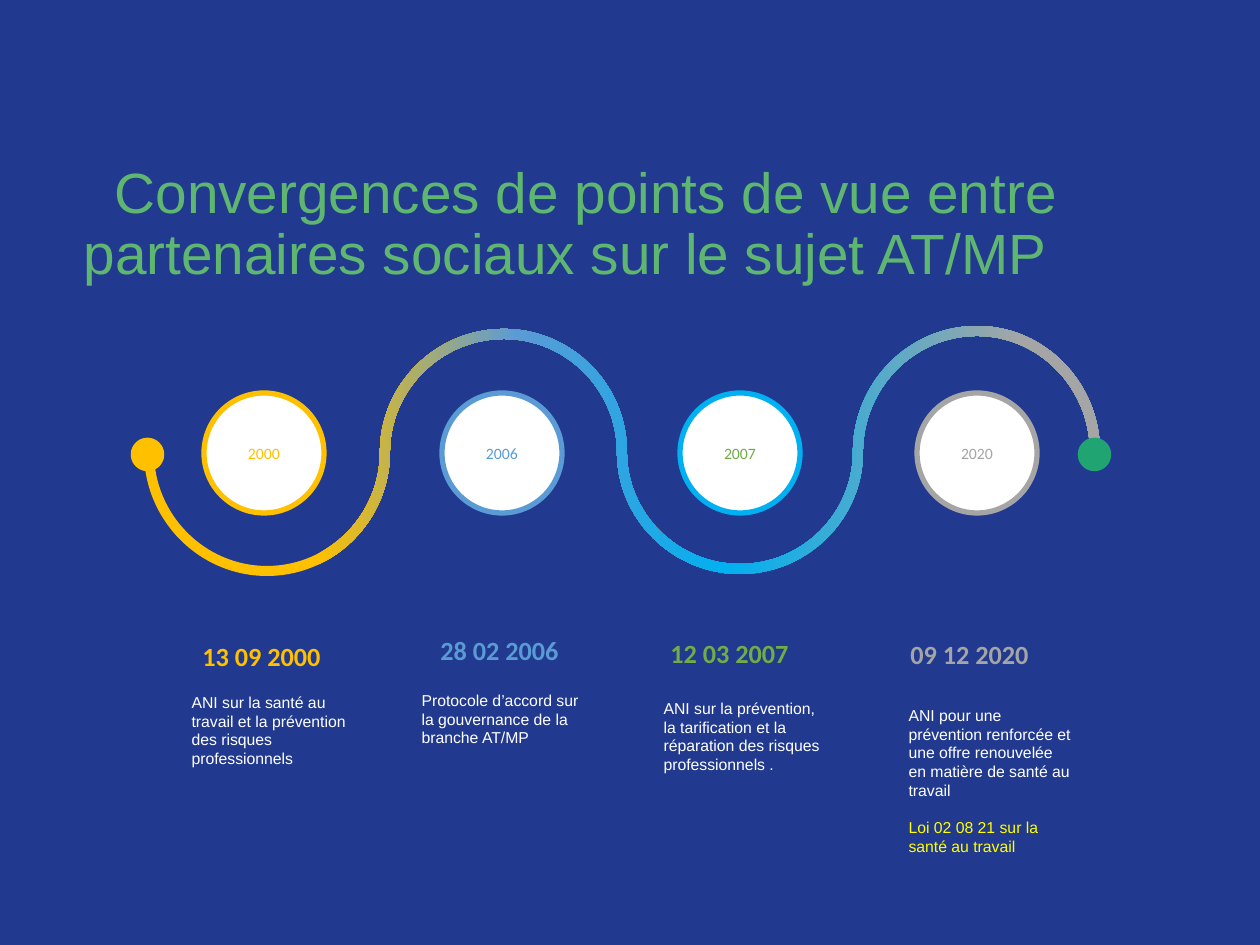
from dataclasses import dataclass

from lxml import etree
from pptx import Presentation
from pptx.dml.color import RGBColor
from pptx.enum.shapes import MSO_SHAPE
from pptx.enum.text import MSO_ANCHOR, MSO_AUTO_SIZE, PP_ALIGN
from pptx.oxml.ns import qn
from pptx.util import Emu, Pt

OVAL = MSO_SHAPE.OVAL
TOP, MIDDLE = MSO_ANCHOR.TOP, MSO_ANCHOR.MIDDLE
LEFT, CENTER = PP_ALIGN.LEFT, PP_ALIGN.CENTER
NO_AUTOFIT = MSO_AUTO_SIZE.NONE

NAVY = RGBColor(0x21, 0x3A, 0x8F)
WHITE = RGBColor(0xFF, 0xFF, 0xFF)
GOLD = RGBColor(0xFF, 0xC0, 0x00)
BLUE = RGBColor(0x5B, 0x9B, 0xD5)
CYAN = RGBColor(0x00, 0xB0, 0xF0)
GREY = RGBColor(0xA5, 0xA5, 0xA5)
GREEN = RGBColor(0x70, 0xAD, 0x47)
TITLE_GREEN = RGBColor(0x5F, 0xB6, 0x70)
END_GREEN = RGBColor(0x20, 0xA4, 0x72)
YELLOW = RGBColor(0xFF, 0xFF, 0x00)

EMU_PER_PX = 914400 / 126
HALF_WIDTH = 5
ROUNDNESS = 0.55
WAVE_KNOTS = [(149, 452), (267, 571), (385, 452), (504, 334), (622, 452),
              (740, 569), (858, 452), (977, 331), (1095, 452)]
WAVE_STOPS = [(18, GOLD), (39, BLUE), (61, CYAN), (92, GREY)]


@dataclass
class Box:
    x: int
    y: int
    w: int
    h: int


@dataclass
class Milestone:
    year: str
    ring: RGBColor
    color: RGBColor
    circle_x: int
    date: str
    date_box: Box
    caption_box: Box
    captions: list[tuple[str, RGBColor]]


MILESTONES = [
    Milestone("2000", GOLD, GOLD, 204, "13 09 2000",
              Box(190, 638, 185, 32), Box(179, 686, 197, 89),
              [("ANI sur la santé au travail et la prévention des risques "
                "professionnels", WHITE)]),
    Milestone("2006", BLUE, BLUE, 442, "28 02 2006",
              Box(428, 632, 203, 32), Box(409, 684, 188, 97),
              [("Protocole d’accord sur la gouvernance de la branche AT/MP", WHITE)]),
    Milestone("2007", CYAN, GREEN, 680, "12 03 2007",
              Box(658, 635, 185, 42), Box(651, 692, 188, 100),
              [("ANI sur la prévention, la tarification et la réparation des "
                "risques professionnels .", WHITE)]),
    Milestone("2020", GREY, GREY, 917, "09 12 2020",
              Box(898, 636, 185, 42), Box(896, 699, 188, 178),
              [("ANI pour une prévention renforcée et une offre renouvelée en "
                "matière de santé au travail", WHITE),
               ("Loi 02 08 21 sur la santé au travail", YELLOW)]),
]


def px(n: float) -> Emu:
    return Emu(round(n * EMU_PER_PX))


def place(sp, box: Box) -> None:
    sp.left, sp.top, sp.width, sp.height = px(box.x), px(box.y), px(box.w), px(box.h)


def add_run(p, text: str, size: float, font: str, color: RGBColor, bold=False) -> None:
    r = p.add_run()
    r.text = text
    r.font.size = Pt(size)
    r.font.name = font
    r.font.bold = bold
    r.font.color.rgb = color


def add_circle(slide, box: Box, fill: RGBColor, line: RGBColor, width: int):
    sp = slide.shapes.add_shape(OVAL, px(box.x), px(box.y), px(box.w), px(box.h))
    sp.shadow.inherit = False
    sp.fill.solid()
    sp.fill.fore_color.rgb = fill
    sp.line.color.rgb = line
    sp.line.width = Pt(width)
    return sp


def wave_edge(offset: int) -> list[tuple[int, int]]:
    points = []
    for i, (x, y) in enumerate(WAVE_KNOTS):
        if i % 2:
            points.append((px(x), px(y + offset)))
        else:
            points.append((px(x + (offset if i % 4 else -offset)), px(y)))
    return points


def curve_segments(sp) -> None:
    start = None
    for i, pt in enumerate(list(sp.element.iter(qn("a:pt")))):
        x, y = int(pt.get("x")), int(pt.get("y"))
        step = i % len(WAVE_KNOTS)
        if step:
            x0, y0 = start
            dx, dy = ROUNDNESS * (x - x0), ROUNDNESS * (y - y0)
            if step % 2:
                controls = [(x0, y0 + dy), (x - dx, y)]
            else:
                controls = [(x0 + dx, y0), (x, y - dy)]
            line = pt.getparent()
            curve = etree.Element(qn("a:cubicBezTo"))
            for cx, cy in controls + [(x, y)]:
                etree.SubElement(curve, qn("a:pt"), x=str(round(cx)), y=str(round(cy)))
            line.getparent().replace(line, curve)
        start = x, y


def add_wave(slide) -> None:
    points = wave_edge(HALF_WIDTH) + wave_edge(-HALF_WIDTH)[::-1]
    builder = slide.shapes.build_freeform(*points[0])
    builder.add_line_segments(points[1:], close=True)
    sp = builder.convert_to_shape()
    curve_segments(sp)
    sp.shadow.inherit = False
    sp.line.fill.background()
    sp.fill.gradient()
    sp.fill.gradient_angle = 0
    stops = sp.element.spPr.find(qn("a:gradFill")).find(qn("a:gsLst"))
    stops.clear()
    for percent, color in WAVE_STOPS:
        stop = etree.SubElement(stops, qn("a:gs"), pos=str(percent * 1000))
        etree.SubElement(stop, qn("a:srgbClr"), val=str(color))


def set_indent(p, margin: int, indent: int) -> None:
    pPr = p._p.get_or_add_pPr()
    pPr.set("marL", str(px(margin)))
    pPr.set("indent", str(px(indent)))
    etree.SubElement(pPr, qn("a:buNone"))


def fill_title(sp) -> None:
    place(sp, Box(24, 165, 1212, 121))
    tf = sp.text_frame
    tf.auto_size = NO_AUTOFIT
    tf.vertical_anchor = MIDDLE
    p = tf.paragraphs[0]
    set_indent(p, 47, 31)
    p.alignment = LEFT
    p.line_spacing = 0.9
    add_run(p, "Convergences de points de vue entre", 32.4, "Arial", TITLE_GREEN)
    p.add_line_break()
    add_run(p, "partenaires sociaux sur le sujet AT/MP", 32.4, "Arial", TITLE_GREEN)


def fill_captions(sp, m: Milestone) -> None:
    place(sp, m.caption_box)
    tf = sp.text_frame
    tf.auto_size = NO_AUTOFIT
    tf.vertical_anchor = TOP
    for i, (text, color) in enumerate(m.captions):
        p = tf.add_paragraph() if i else tf.paragraphs[0]
        set_indent(p, 0, 0)
        p.space_before = Pt(10 if i else 0)
        add_run(p, text, 9, "Arial", color)


def add_date(slide, m: Milestone) -> None:
    b = m.date_box
    tf = slide.shapes.add_textbox(px(b.x), px(b.y), px(b.w), px(b.h)).text_frame
    tf.word_wrap = True
    p = tf.paragraphs[0]
    p.line_spacing = 0.9
    add_run(p, m.date, 15, "Calibri", m.color, bold=True)


def main() -> None:
    prs = Presentation()
    prs.slide_width, prs.slide_height = px(1260), px(945)
    slide = prs.slides.add_slide(prs.slide_layouts[4])
    slide.background.fill.solid()
    slide.background.fill.fore_color.rgb = NAVY
    fill_title(slide.shapes.title)
    for m in MILESTONES:
        sp = add_circle(slide, Box(m.circle_x, 393, 120, 120), WHITE, m.ring, 3)
        sp.text_frame.vertical_anchor = MIDDLE
        p = sp.text_frame.paragraphs[0]
        p.alignment = CENTER
        add_run(p, m.year, 9, "Calibri", m.color)
    add_wave(slide)
    for x, color in ((136, GOLD), (1083, END_GREEN)):
        add_circle(slide, Box(x, 443, 23, 23), color, color, 6)
    for idx, m in enumerate(MILESTONES, start=1):
        add_date(slide, m)
        fill_captions(slide.placeholders[idx], m)
    prs.save("out.pptx")


if __name__ == "__main__":
    main()
